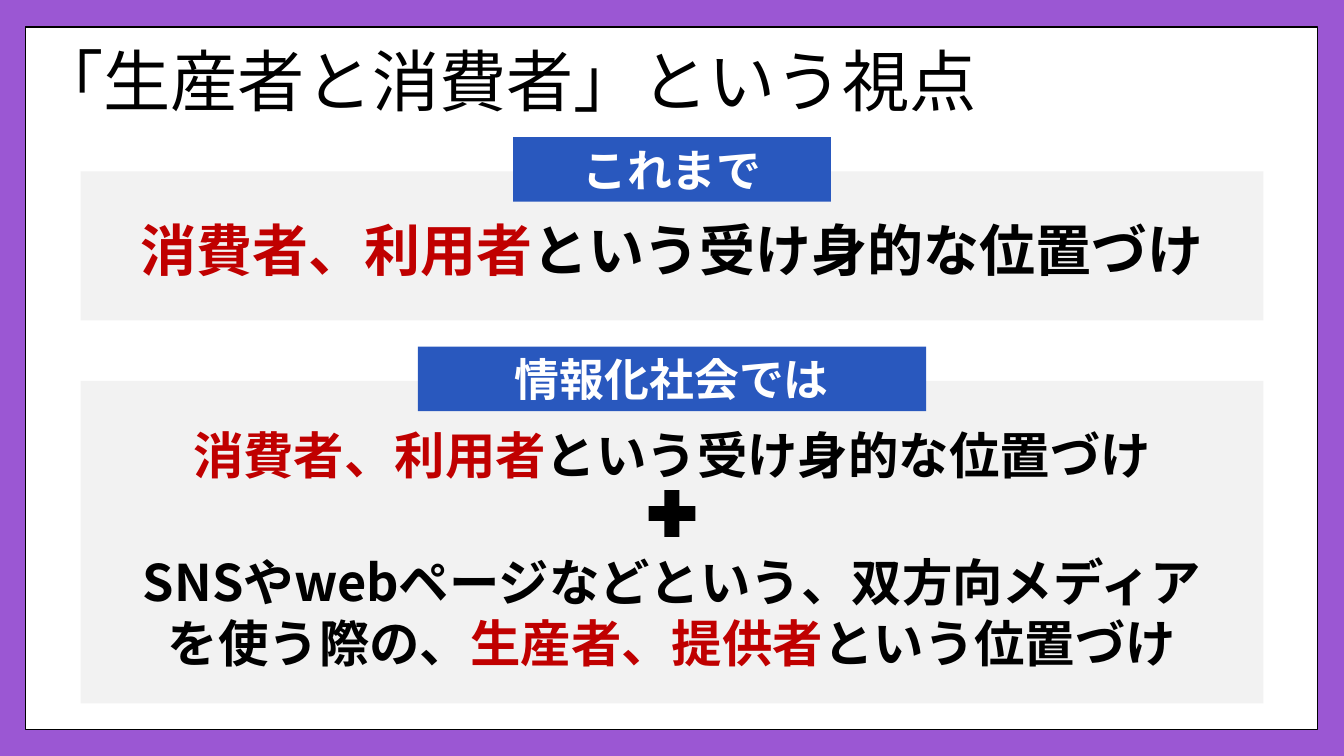
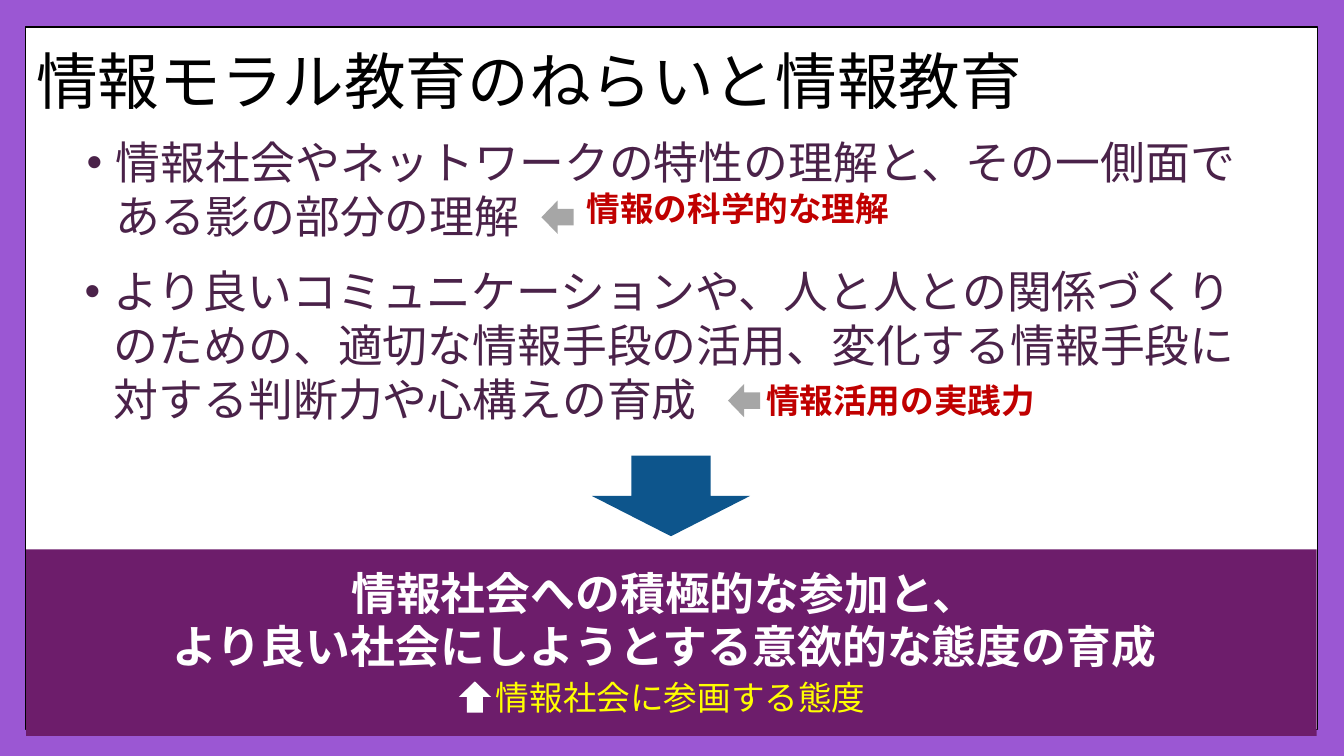
from lxml.etree import SubElement
from pptx import Presentation
from pptx.dml.color import RGBColor
from pptx.enum.lang import MSO_LANGUAGE_ID
from pptx.enum.shapes import MSO_SHAPE
from pptx.enum.text import MSO_ANCHOR, MSO_AUTO_SIZE, PP_ALIGN
from pptx.oxml.ns import qn
from pptx.util import Emu, Pt

PX = 9144  # EMU per px, 100 px to the inch
WIDTH, HEIGHT = 1333, 750
FRAME = (25, 27, 1282, 697)
TITLE = (26, 27, 1280, 114)

BODY_FONT, TITLE_FONT = "Noto Sans CJK JP", "Cabin"
PURPLE, PLUM, INK = "9B57D3", "6D1D6B", "4A2249"
BLUE, DEEP_BLUE, RED, YELLOW = "2958BE", "0D558C", "C00000", "FFFF00"
BLACK, WHITE, PALE, GREY = "000000", "FFFFFF", "F2F2F2", "A6A6A6"


def px(length):
    return Emu(round(length * PX))


def rgb(hex_code):
    return RGBColor.from_string(hex_code)


def inside(box, left, top, width, height):
    """Turn a place relative to box into a place on the slide."""
    return box[0] + left, box[1] + top, width, height


def place(shape, box):
    for side, length in zip(("left", "top", "width", "height"), box):
        setattr(shape, side, px(length))


def write(frame, paragraphs, size, bold=False, font=BODY_FONT,
          align=PP_ALIGN.LEFT, anchor=MSO_ANCHOR.TOP, spacing=1.0):
    """Fill a text frame; each paragraph is a list of (text, colour)."""
    frame_format = {"word_wrap": True, "auto_size": MSO_AUTO_SIZE.NONE,
                    "vertical_anchor": anchor}
    paragraph_format = {"alignment": align, "line_spacing": spacing,
                        "space_before": Pt(0), "space_after": Pt(0)}
    font_format = {"name": font, "size": Pt(size), "bold": bold,
                   "language_id": MSO_LANGUAGE_ID.JAPANESE}
    for key, value in frame_format.items():
        setattr(frame, key, value)
    for number, parts in enumerate(paragraphs):
        paragraph = frame.add_paragraph() if number else frame.paragraphs[0]
        for key, value in paragraph_format.items():
            setattr(paragraph, key, value)
        for text, colour in parts:
            run = paragraph.add_run()
            run.text = text
            for key, value in font_format.items():
                setattr(run.font, key, value)
            run.font.color.rgb = rgb(colour)
            east_asian = SubElement(run.font._element, qn("a:ea"))
            east_asian.set("typeface", BODY_FONT)
            run.font._element.find(qn("a:latin")).addnext(east_asian)


def add_block(shapes, preset, box, fill, line=None):
    block = shapes.add_shape(preset, *map(px, box))
    block.shadow.inherit = False
    block.fill.solid()
    block.fill.fore_color.rgb = rgb(fill)
    if line:
        block.line.color.rgb = rgb(line)
        block.line.width = Pt(1)
    else:
        block.line.fill.background()
    return block


def add_text(shapes, box, paragraphs, size, **style):
    textbox = shapes.add_textbox(*map(px, box))
    write(textbox.text_frame, paragraphs, size, **style)


# Shared look: purple ground, framed white sheet, title place
def style_master(deck, slide):
    master = deck.slide_master
    master.background.fill.solid()
    master.background.fill.fore_color.rgb = rgb(PURPLE)
    place(master.placeholders[0], TITLE)
    sheet = add_block(slide.shapes, MSO_SHAPE.RECTANGLE, FRAME, WHITE, BLACK)
    master.shapes.element.insert(2, sheet.element)


def set_title(slide, text, size):
    write(slide.shapes.title.text_frame, [[(text, BLACK)]], size,
          font=TITLE_FONT, anchor=MSO_ANCHOR.MIDDLE, spacing=0.9)


# Grey panel with a blue tab centred over its top edge
def add_panel(slide, box, label, tab_width, statements, size):
    shapes = slide.shapes.add_group_shape().shapes
    add_block(shapes, MSO_SHAPE.RECTANGLE, box, PALE)
    tab_box = inside(box, (box[2] - tab_width) / 2, -34, tab_width, 64)
    tab = add_block(shapes, MSO_SHAPE.RECTANGLE, tab_box, BLUE)
    write(tab.text_frame, [[(label, WHITE)]], 32, bold=True,
          align=PP_ALIGN.CENTER, anchor=MSO_ANCHOR.MIDDLE)
    for top, height, parts in statements:
        add_text(shapes, inside(box, 43, top, 1087, height), [parts], size,
                 bold=True, align=PP_ALIGN.CENTER)
    return shapes


# Small arrow followed by the name of the matching goal
def add_goal(shapes, arrow, arrow_box, fill, text_box, text, colour, bold):
    add_block(shapes, arrow, arrow_box, fill)
    add_text(shapes, text_box, [[(text, colour)]], 24, bold=bold)


# Bulleted aim in a body placeholder, with its goal beside the last line
def add_aim(slide, body, box, text, arrow_at, goal_at, goal):
    place(body, box)
    write(body.text_frame, [[(text, INK)]], 32)
    properties = body.text_frame.paragraphs[0]._p.get_or_add_pPr()
    for key, indent in {"marL": 29, "indent": -29}.items():
        properties.set(key, str(px(indent)))
    add_goal(slide.shapes, MSO_SHAPE.LEFT_ARROW,
             inside(box, *arrow_at, 32, 33), GREY,
             inside(box, *goal_at, 378, 50), goal, RED, True)


# Plum band with the overall conclusion
def add_conclusion(slide, box):
    shapes = slide.shapes.add_group_shape().shapes
    add_block(shapes, MSO_SHAPE.RECTANGLE, box, PLUM)
    add_text(shapes, inside(box, 82, 11, 1102, 118),
             [[("情報社会への積極的な参加と、", WHITE)],
              [("より良い社会にしようとする意欲的な態度の育成", WHITE)]],
             32, bold=True, align=PP_ALIGN.CENTER)
    add_goal(shapes, MSO_SHAPE.UP_ARROW, inside(box, 429, 131, 32, 31), WHITE,
             inside(box, 456, 122, 405, 50), "情報社会に参画する態度",
             YELLOW, False)


def build_viewpoint(slide):
    set_title(slide, "「生産者と消費者」という視点", 48)
    passive = [("消費者、利用者", RED), ("という受け身的な位置づけ", BLACK)]
    active = [("SNSやwebページなどという、双方向メディアを使う際の、", BLACK),
              ("生産者、提供者", RED), ("という位置づけ", BLACK)]
    add_panel(slide, (80, 170, 1173, 148), "これまで", 315,
              [(39, 77, passive)], 40)
    now = (80, 378, 1173, 320)
    shapes = add_panel(slide, now, "情報化社会では", 504,
                       [(38, 71, passive), (164, 131, active)], 36)
    add_block(shapes, MSO_SHAPE.MATH_PLUS, inside(now, 555, 100, 63, 63), BLACK)


def build_aims(slide):
    set_title(slide, "情報モラル教育のねらいと情報教育", 44)
    _, understanding, practice = slide.placeholders
    add_aim(slide, understanding, (76, 129, 1165, 118),
            "情報社会やネットワークの特性の理解と、その一側面である影の部分の理解",
            (461, 70), (496, 53), "情報の科学的な理解")
    add_aim(slide, practice, (74, 257, 1165, 172),
            "より良いコミュニケーションや、人と人との関係づくりのための、"
            "適切な情報手段の活用、変化する情報手段に対する判断力や心構えの育成",
            (648, 124), (676, 115), "情報活用の実践力")
    add_block(slide.shapes, MSO_SHAPE.DOWN_ARROW, (587, 452, 157, 80), DEEP_BLUE)
    add_conclusion(slide, (26, 545, 1280, 185))


def main():
    deck = Presentation()
    deck.slide_width, deck.slide_height = px(WIDTH), px(HEIGHT)
    title_only, two_bodies = deck.slide_layouts[5], deck.slide_layouts[3]
    viewpoint = deck.slides.add_slide(title_only)
    style_master(deck, viewpoint)
    build_viewpoint(viewpoint)
    build_aims(deck.slides.add_slide(two_bodies))
    deck.save("out.pptx")


if __name__ == "__main__":
    main()
